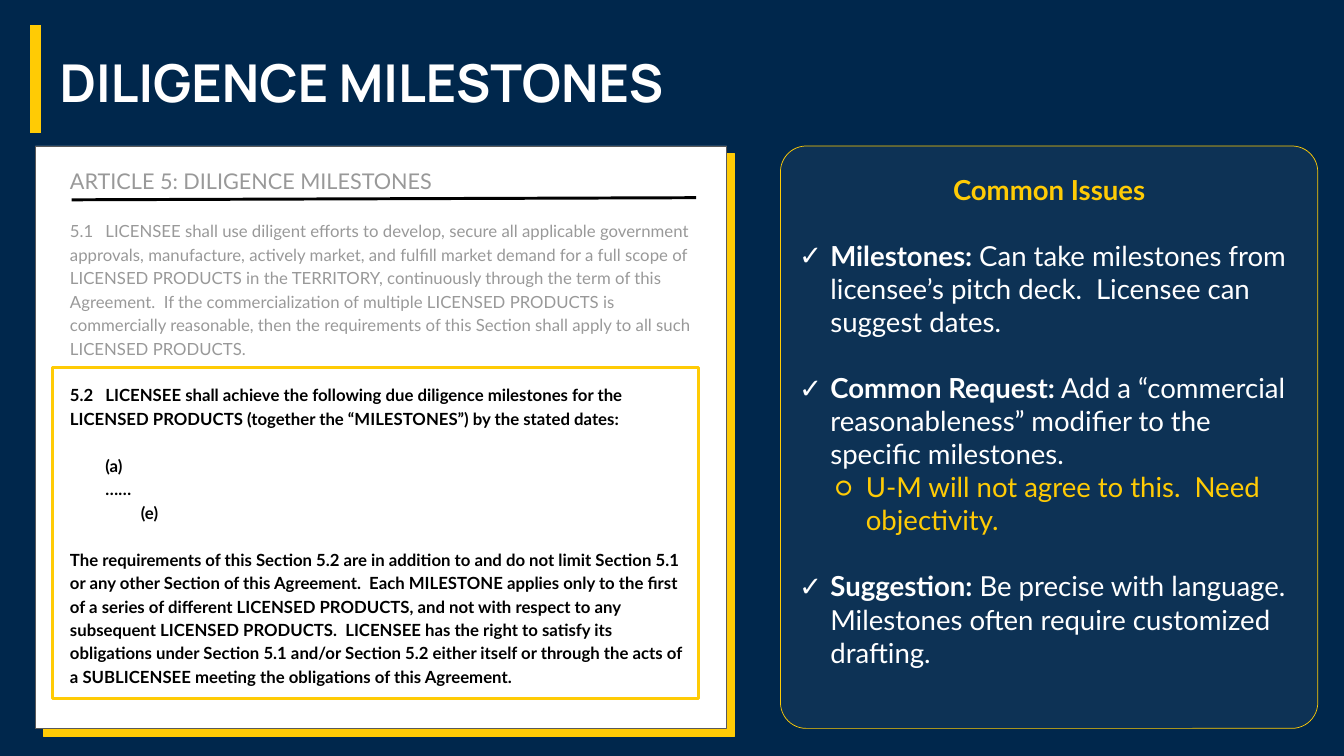
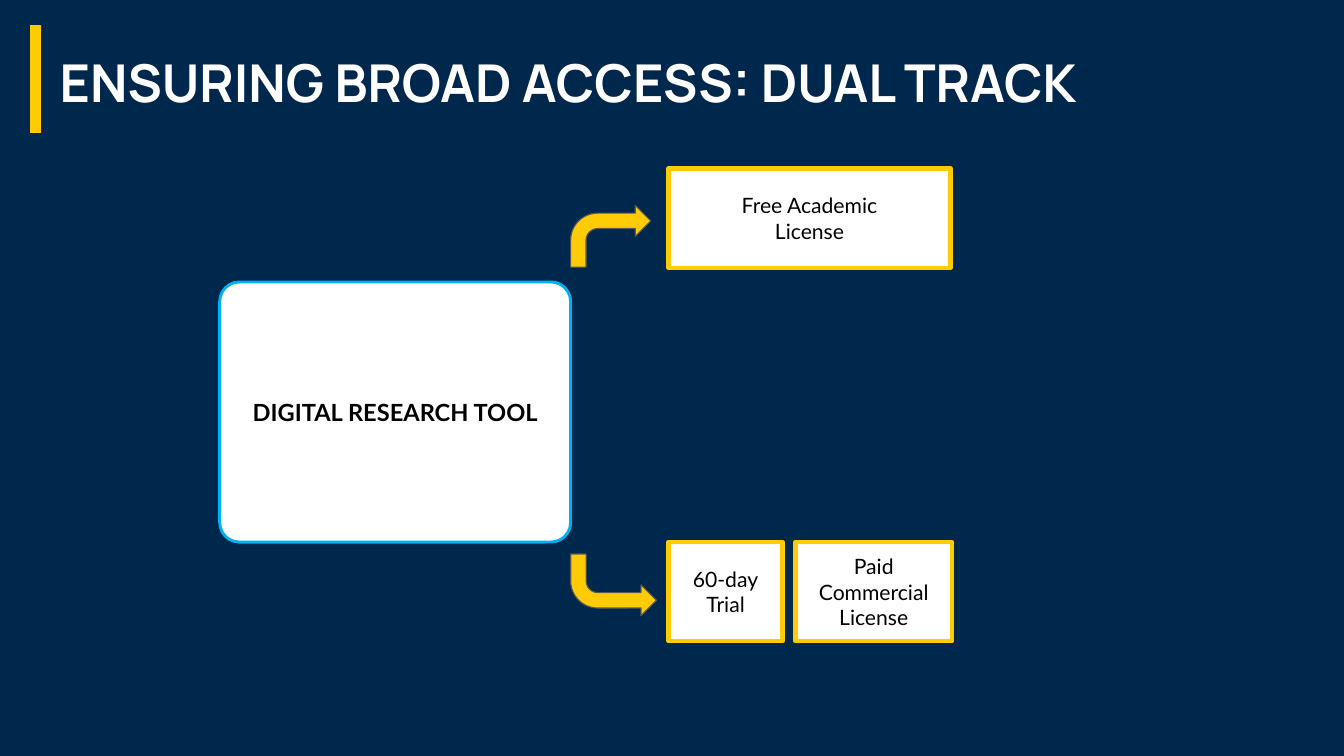
"""Build two licensing slides: diligence milestones and dual-track access."""
import lxml.etree
import pptx
import pptx.dml.color
import pptx.enum.shapes
import pptx.enum.text
import pptx.oxml.ns
import pptx.util

COLOURS = {
    "navy": "00274C", "maize": "FFCB05", "white": "FFFFFF", "black": "000000",
    "grey": "999999", "outline": "595959", "blue": "00B0F0",
}
RGB = {name: pptx.dml.color.RGBColor.from_string(value) for name, value in COLOURS.items()}
SHAPES = pptx.enum.shapes.MSO_SHAPE
ANCHOR = pptx.enum.text.MSO_ANCHOR
ALIGN = pptx.enum.text.PP_ALIGN
Inches, Pt, qn = pptx.util.Inches, pptx.util.Pt, pptx.oxml.ns.qn

presentation = pptx.Presentation()
presentation.slide_width = Inches(18.96)
presentation.slide_height = Inches(10.67)
COLUMN = presentation.slide_width / 100
ROW = presentation.slide_height / 100


def add_box(slide, preset, place, fill, line, width):
    """Add a preset shape placed in percent of the slide."""
    left, top, wide, high = place
    shape = slide.shapes.add_shape(
        preset, int(left * COLUMN), int(top * ROW), int(wide * COLUMN), int(high * ROW))
    shape.shadow.inherit = False
    if fill:
        shape.fill.solid()
        shape.fill.fore_color.rgb = RGB[fill]
    else:
        shape.fill.background()
    shape.line.color.rgb = RGB[line]
    shape.line.width = Pt(width)
    return shape


def write(shape, lines, size, colour, bold=False, font="Lato", margin=0.1,
          align=ALIGN.LEFT, anchor=ANCHOR.MIDDLE):
    """Fill a shape with one paragraph per line in a single style."""
    frame = shape.text_frame
    frame.word_wrap = True
    frame.vertical_anchor = anchor
    frame.margin_left = frame.margin_right = Inches(margin)
    frame.margin_top = frame.margin_bottom = Inches(margin)
    frame.text = "\n".join(lines)
    for paragraph in frame.paragraphs:
        paragraph.alignment = align
        for run in paragraph.runs:
            run.font.name = font
            run.font.size = Pt(size)
            run.font.bold = bold
            run.font.color.rgb = RGB[colour]
    return frame.paragraphs


slides = []
for title in ("DILIGENCE MILESTONES", "ENSURING BROAD ACCESS: DUAL TRACK"):
    slide = presentation.slides.add_slide(presentation.slide_layouts[6])
    slide.background.fill.solid()
    slide.background.fill.fore_color.rgb = RGB["navy"]
    title_box = slide.shapes.add_textbox(
        int(3.43 * COLUMN), int(5.2 * ROW), int(93.2 * COLUMN), int(11.15 * ROW))
    write(title_box, [title], 53, "white", True, "Manrope", 0.19)
    slides.append(slide)
milestones_slide, access_slide = slides

PANEL_TOP, PANEL_HEIGHT = 19.31, 77.04
issues_panel = add_box(milestones_slide, SHAPES.ROUNDED_RECTANGLE,
                       (58.07, PANEL_TOP, 39.98, PANEL_HEIGHT), "white", "maize", 0.75)
issues_panel.adjustments[0] = 0.048
panel_colour = issues_panel._element.spPr.find(qn("a:solidFill"))[0]
lxml.etree.SubElement(panel_colour, qn("a:alpha"), val="5000")

issues = [
    ("Milestones:", " Can take milestones from licensee’s pitch deck.  "
     "Licensee can suggest dates.", "✓", "white"),
    ("Common Request:", " Add a “commercial reasonableness” modifier to the "
     "specific milestones.", "✓", "white"),
    ("", "U-M will not agree to this.  Need objectivity.", "○", "maize"),
    ("Suggestion:", " Be precise with language. Milestones often require "
     "customized drafting.", "✓", "white"),
]
heading, *issue_paragraphs = write(
    issues_panel, ["Common Issues"] + [issue[0] for issue in issues], 28, "white", True)
heading.alignment = ALIGN.CENTER
heading.runs[0].font.color.rgb = RGB["maize"]
issues_panel.text_frame.margin_bottom = Inches(0.57)
for paragraph, (lead, body, bullet, colour) in zip(issue_paragraphs, issues):
    paragraph.level = 0 if lead else 1
    paragraph.space_before = Pt(33.6 if lead else 0)
    properties = paragraph._p.get_or_add_pPr()
    properties.set("marL", str(Inches(0.5 + 0.5 * paragraph.level)))
    properties.set("indent", str(Inches(-0.44)))
    bullet_colour = lxml.etree.SubElement(properties, qn("a:buClr"))
    lxml.etree.SubElement(bullet_colour, qn("a:srgbClr"), val=COLOURS[colour])
    lxml.etree.SubElement(properties, qn("a:buFont"), typeface="Lato")
    lxml.etree.SubElement(properties, qn("a:buChar"), char=bullet)
    run = paragraph.add_run()
    run.text = body
    run.font.name = "Lato"
    run.font.size = Pt(28)
    run.font.bold = False
    run.font.color.rgb = RGB[colour]

page = add_box(milestones_slide, SHAPES.RECTANGLE,
               (2.64, PANEL_TOP, 51.42, PANEL_HEIGHT), "white", "outline", 0.75)
page_shadow = lxml.etree.SubElement(
    page._element.spPr.find(qn("a:effectLst")), qn("a:outerShdw"),
    blurRad="0", dist=str(Pt(11.2)), dir="2700000", algn="bl", rotWithShape="0")
lxml.etree.SubElement(page_shadow, qn("a:srgbClr"), val=COLOURS["maize"])

article = [
    ("ARTICLE 5: DILIGENCE MILESTONES", 0, 0),
    ("5.1\tLICENSEE shall use diligent efforts to develop, secure all applicable "
     "government approvals, manufacture, actively market, and fulfill market demand for "
     "a full scope of LICENSED PRODUCTS in the TERRITORY, continuously through the term "
     "of this Agreement.  If the commercialization of multiple LICENSED PRODUCTS is "
     "commercially reasonable, then the requirements of this Section shall apply to all "
     "such LICENSED PRODUCTS.", 0, 24),
    ("5.2\tLICENSEE shall achieve the following due diligence milestones for the "
     "LICENSED PRODUCTS (together the “MILESTONES”) by the stated dates:", 0, 23.5),
    ("(a)", 0.5, 24),
    ("……", 0.5, 0),
    ("(e)", 1, 0),
    ("The requirements of this Section 5.2 are in addition to and do not limit Section "
     "5.1 or any other Section of this Agreement.  Each MILESTONE applies only to the "
     "first of a series of different LICENSED PRODUCTS, and not with respect to any "
     "subsequent LICENSED PRODUCTS.  LICENSEE has the right to satisfy its obligations "
     "under Section 5.1 and/or Section 5.2 either itself or through the acts of a "
     "SUBLICENSEE meeting the obligations of this Agreement.", 0, 23.5),
]
article_box = milestones_slide.shapes.add_textbox(
    int(4.69 * COLUMN), int(20.71 * ROW), int(47.26 * COLUMN), int(70.2 * ROW))
article_paragraphs = write(article_box, [clause[0] for clause in article], 17, "black",
                           True, anchor=ANCHOR.TOP)
for paragraph, (text, indent, gap) in zip(article_paragraphs, article):
    paragraph.line_spacing = 1.17
    paragraph.space_before = Pt(gap)
    paragraph._p.get_or_add_pPr().set("indent", str(Inches(indent)))
for paragraph in article_paragraphs[:2]:
    paragraph.runs[0].font.bold = False
    paragraph.runs[0].font.color.rgb = RGB["grey"]
article_paragraphs[0].runs[0].font.size = Pt(22)

add_box(milestones_slide, SHAPES.RECTANGLE, (3.9, 48.55, 48.05, 43.86), None, "maize", 3)

title_bar = (2.64, 3.28, 2.64, 17.62, "maize", 12)
article_rule = (5.33, 26.43, 51.79, 26.15, "black", 3)
for slide, (left, top, right, bottom, colour, width) in (
        (milestones_slide, title_bar), (access_slide, title_bar),
        (milestones_slide, article_rule)):
    line = slide.shapes.add_connector(
        pptx.enum.shapes.MSO_CONNECTOR.STRAIGHT,
        int(left * COLUMN), int(top * ROW), int(right * COLUMN), int(bottom * ROW))
    line.line.color.rgb = RGB[colour]
    line.line.width = Pt(width)
    lxml.etree.SubElement(line._element.spPr, qn("a:effectLst"))

for top, width, downward in ((27.18, 5.96, False), (73.29, 6.38, True)):
    arrow = add_box(access_slide, SHAPES.BENT_ARROW, (42.46, top, width, 8.15),
                    "maize", "outline", 1.15)
    for index, value in enumerate((0.25, 0.25, 0.25, 0.438)):
        arrow.adjustments[index] = value
    if downward:
        arrow.rotation = 180
        arrow._element.spPr.find(qn("a:xfrm")).set("flipH", "1")

for left, top, width, lines in (
        (49.74, 22.31, 20.99, ["Free Academic", "License"]),
        (49.74, 71.7, 8.49, ["60-day", "Trial"]),
        (59.18, 71.7, 11.66, ["Paid Commercial", "License"])):
    licence = add_box(access_slide, SHAPES.RECTANGLE, (left, top, width, 13.12),
                      "white", "maize", 4.6)
    write(licence, lines, 21.5, "black", margin=0.15, align=ALIGN.CENTER)

tool = add_box(access_slide, SHAPES.ROUNDED_RECTANGLE, (16.35, 37.3, 26.11, 34.4),
               "white", "blue", 3)
tool.adjustments[0] = 0.075
write(tool, ["DIGITAL RESEARCH TOOL"], 24, "black", True, align=ALIGN.CENTER)

presentation.save("out.pptx")
